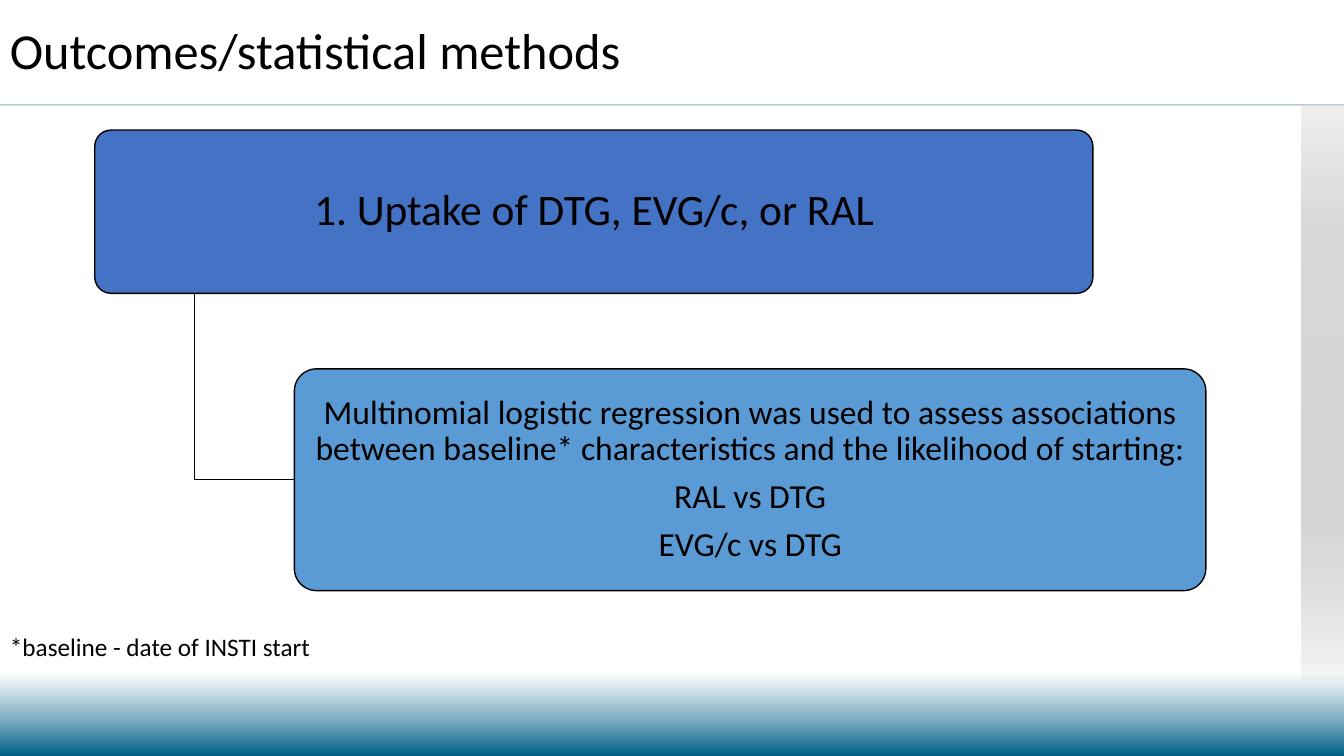
from lxml.etree import SubElement
from pptx import Presentation
from pptx.dml.color import RGBColor
from pptx.enum.shapes import MSO_CONNECTOR, MSO_SHAPE
from pptx.enum.text import MSO_ANCHOR, MSO_AUTO_SIZE, PP_ALIGN
from pptx.oxml.ns import qn
from pptx.util import Inches, Pt

COLORS = {
    "black": "000000",
    "white": "FFFFFF",
    "teal": "005F86",
    "pale_teal": "80AFC3",
    "blue": "4472C4",
    "light_blue": "5B9BD5",
    "silver": "D9D9D9",
    "gray": "D5D5D5",
    "dark_gray": "BFBFBF",
}
FONT = "Calibri"


def rgb(name):
    return RGBColor.from_string(COLORS[name])


def set_alpha(color_element, percent):
    SubElement(color_element, qn("a:alpha"), val=str(percent * 1000))


def set_gradient(fill, owner, stops):
    """Fill from top to bottom; stops are (position, colour, opacity) in percent."""
    fill.gradient()
    fill.gradient_angle = 270
    stop_list = next(owner.iter(qn("a:gsLst")))
    for stop in list(stop_list):
        stop_list.remove(stop)
    for position, color, opacity in stops:
        stop = SubElement(stop_list, qn("a:gs"), pos=str(position * 1000))
        color_element = SubElement(stop, qn("a:srgbClr"), val=COLORS[color])
        if opacity < 100:
            set_alpha(color_element, opacity)


def write_text(frame, text, *, size, align=PP_ALIGN.LEFT, anchor=MSO_ANCHOR.TOP,
               line_spacing=1.0, space_after=0, margins=(0.1, 0.05)):
    frame.word_wrap = True
    frame.vertical_anchor = anchor
    frame.margin_left = frame.margin_right = Inches(margins[0])
    frame.margin_top = frame.margin_bottom = Inches(margins[1])
    for index, line in enumerate(text.split("\n")):
        paragraph = frame.add_paragraph() if index else frame.paragraphs[0]
        paragraph.alignment = align
        paragraph.line_spacing = line_spacing
        paragraph.space_after = Pt(space_after)
        run = paragraph.add_run()
        run.text = line
        run.font.name = FONT
        run.font.size = Pt(size)
        run.font.color.rgb = rgb("black")


class SlideBuilder:
    def __init__(self, slide):
        self.slide = slide
        self.shapes = slide.shapes

    def background(self, stops):
        set_gradient(self.slide.background.fill, self.slide.element, stops)

    def rule(self, left, top, right, color, opacity):
        connector = self.shapes.add_connector(
            MSO_CONNECTOR.STRAIGHT, Inches(left), Inches(top), Inches(right), Inches(top))
        connector.line.width = Pt(1)
        connector.line.color.rgb = rgb(color)
        set_alpha(next(connector.element.iter(qn("a:srgbClr"))), opacity)
        SubElement(connector.element.spPr, qn("a:effectLst"))

    def gradient_band(self, box, stops):
        shape = self.shapes.add_shape(MSO_SHAPE.RECTANGLE, *map(Inches, box))
        shape.shadow.inherit = False
        shape.line.fill.background()
        set_gradient(shape.fill, shape.element, stops)

    def card(self, box, text, color, size, margins):
        shape = self.shapes.add_shape(MSO_SHAPE.ROUNDED_RECTANGLE, *map(Inches, box))
        shape.adjustments[0] = 0.1
        shape.shadow.inherit = False
        shape.fill.solid()
        shape.fill.fore_color.rgb = rgb(color)
        shape.line.color.rgb = rgb("black")
        shape.line.width = Pt(1)
        write_text(shape.text_frame, text, size=size, align=PP_ALIGN.CENTER,
                   anchor=MSO_ANCHOR.MIDDLE, line_spacing=0.9,
                   space_after=round(size * 0.35, 1), margins=margins)

    def elbow(self, points):
        start, *rest = [(Inches(x), Inches(y)) for x, y in points]
        builder = self.shapes.build_freeform(*start)
        builder.add_line_segments(rest, close=False)
        shape = builder.convert_to_shape()
        shape.shadow.inherit = False
        shape.fill.background()
        shape.line.color.rgb = rgb("black")
        shape.line.width = Pt(1)

    def text_box(self, box, text, grow=False, **text_format):
        shape = self.shapes.add_textbox(*map(Inches, box))
        write_text(shape.text_frame, text, **text_format)
        if grow:
            shape.text_frame.auto_size = MSO_AUTO_SIZE.SHAPE_TO_FIT_TEXT


def main():
    presentation = Presentation()
    presentation.slide_width = Inches(13.33)
    presentation.slide_height = Inches(7.5)
    builder = SlideBuilder(presentation.slides.add_slide(presentation.slide_layouts[6]))

    # Backdrop, header rule and side band
    builder.background([(89, "white", 100), (95, "pale_teal", 100), (100, "teal", 100)])
    builder.rule(0, 1.04, 13.33, "teal", 30)
    builder.gradient_band((12.91, 1.05, 0.42, 5.69), [
        (0, "silver", 40), (21, "silver", 100), (70, "gray", 100), (100, "dark_gray", 13)])

    # Outcome and its method, joined by an elbow
    outcome = (0.94, 1.29, 9.9, 1.62)
    method = (2.92, 3.66, 9.04, 2.2)
    builder.card(outcome, "1. Uptake of DTG, EVG/c, or RAL", "blue", 31, (0.06, 0.04))
    stem = outcome[0] + outcome[2] / 10
    middle = method[1] + method[3] / 2
    builder.elbow([(stem, outcome[1] + outcome[3]), (stem, middle), (method[0], middle)])
    builder.card(
        method,
        "Multinomial logistic regression was used to assess associations between "
        "baseline* characteristics and the likelihood of starting:\n"
        "RAL vs DTG\nEVG/c vs DTG",
        "light_blue", 24, (0.05, 0.03))

    # Footnote and title
    builder.text_box((0, 6.21, 4.15, 0.4), "*baseline - date of INSTI start", grow=True, size=18)
    builder.text_box((0, 0, 11.5, 1.06), "Outcomes/statistical methods", size=36,
                     anchor=MSO_ANCHOR.MIDDLE, line_spacing=0.9)

    presentation.save("out.pptx")


if __name__ == "__main__":
    main()
